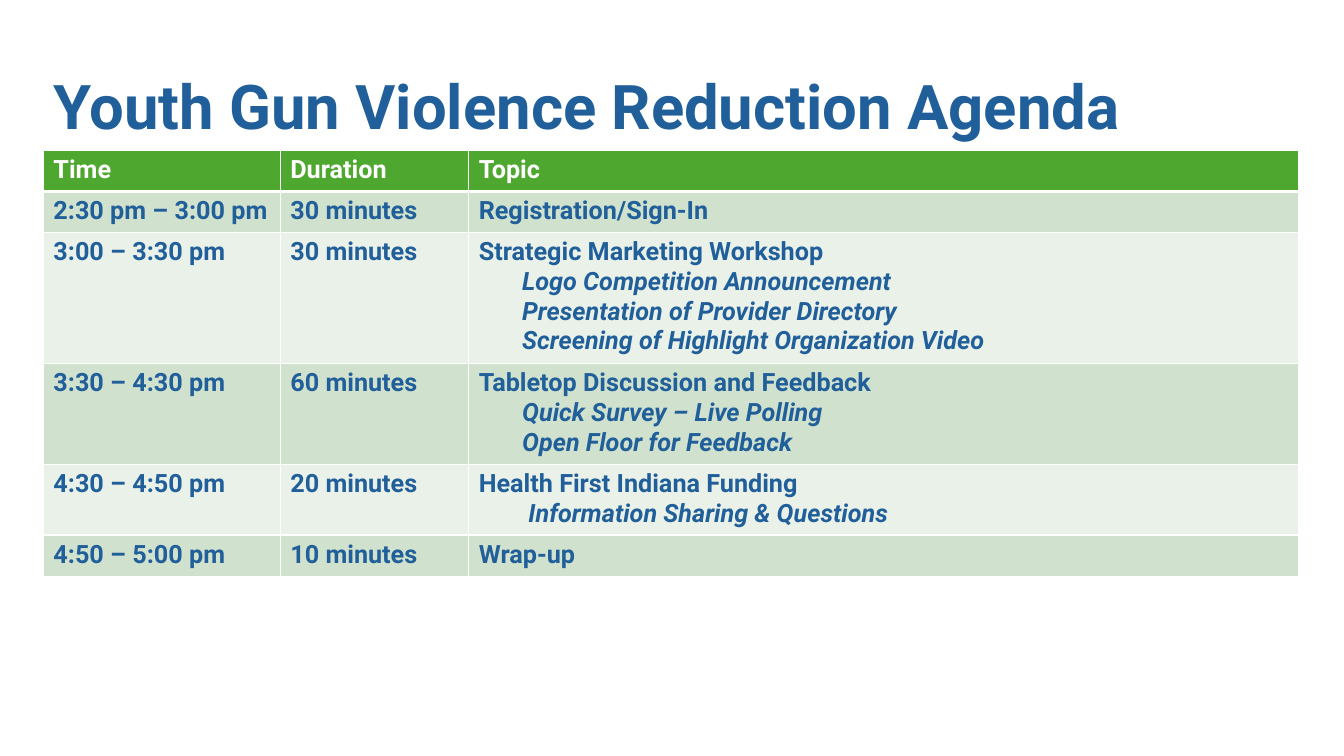
"""Builds the agenda slide: a title above a table of times, durations and topics."""
from dataclasses import dataclass

from lxml.etree import SubElement
from pptx import Presentation
from pptx.dml.color import RGBColor as Color
from pptx.enum.text import MSO_VERTICAL_ANCHOR as Anchor
from pptx.oxml.ns import qn
from pptx.util import Pt


@dataclass(frozen=True)
class Theme:
    font: str = "Roboto"
    title_size: int = 44
    table_size: int = 18
    ink: str = "215F9A"
    white: str = "FFFFFF"
    header: str = "4EA72E"
    bands: tuple = ("D0E1CD", "E9F1E8")
    thin: int = 1
    thick: int = 3


THEME = Theme()
COLUMN_WIDTHS = (169.2, 134.6, 592.6)
MIN_ROW, LINE_HEIGHT, CELL_MARGINS = 29.4, 21.1, 7.2
DETAIL_INDENT, DEEP_INDENT = 31, 35.5

HEADINGS = ("Time", "Duration", "Topic")
SESSIONS = (
    ("2:30 pm – 3:00 pm", "30 minutes", "Registration/Sign-In", (), 0),
    ("3:00 – 3:30 pm", "30 minutes", "Strategic Marketing Workshop",
     ("Logo Competition Announcement", "Presentation of Provider Directory",
      "Screening of Highlight Organization Video"), DETAIL_INDENT),
    ("3:30 – 4:30 pm", "60 minutes", "Tabletop Discussion and Feedback",
     ("Quick Survey – Live Polling", "Open Floor for Feedback"), DETAIL_INDENT),
    ("4:30 – 4:50 pm", "20 minutes", "Health First Indiana Funding",
     ("Information Sharing & Questions",), DEEP_INDENT),
    ("4:50 – 5:00 pm", "10 minutes", "Wrap-up", (), 0),
)


def add_span(para, text, size, color, italic=False):
    span = para.add_run()
    span.text = text
    font = span.font
    font.name, font.size, font.bold, font.italic = THEME.font, Pt(size), True, italic
    font.color.rgb = Color.from_string(color)


def add_title(page, text):
    box = page.shapes.add_textbox(Pt(31), Pt(26), Pt(828), Pt(104.4))
    frame = box.text_frame
    frame.word_wrap = True
    frame.vertical_anchor = Anchor.MIDDLE
    para = frame.paragraphs[0]
    para.line_spacing = 0.9
    add_span(para, text, THEME.title_size, THEME.ink)


def style_cell(cell, fill, top, bottom):
    properties = cell._tc.get_or_add_tcPr()
    sides = (("L", THEME.thin), ("R", THEME.thin), ("T", top), ("B", bottom))
    for side, width in sides:
        line = SubElement(properties, qn(f"a:ln{side}"), w=str(Pt(width)))
        paint = SubElement(line, qn("a:solidFill"))
        SubElement(paint, qn("a:srgbClr"), val=THEME.white)
    cell.fill.solid()
    cell.fill.fore_color.rgb = Color.from_string(fill)


def fill_cell(cell, text, color, details=(), indent=0):
    frame = cell.text_frame
    add_span(frame.paragraphs[0], text, THEME.table_size, color)
    for detail in details:
        para = frame.add_paragraph()
        para._p.get_or_add_pPr().set("marL", str(Pt(indent)))
        add_span(para, detail, THEME.table_size, color, italic=True)


def add_agenda(page):
    heights = [MIN_ROW] + [
        max(MIN_ROW, CELL_MARGINS + LINE_HEIGHT * (1 + len(details)))
        for *_, details, _ in SESSIONS
    ]
    table = page.shapes.add_table(
        len(heights), len(HEADINGS), Pt(31), Pt(107.3),
        Pt(sum(COLUMN_WIDTHS)), Pt(sum(heights))).table
    table.horz_banding = False
    for column, width in zip(table.columns, COLUMN_WIDTHS):
        column.width = Pt(width)
    for row, height in zip(table.rows, heights):
        row.height = Pt(height)

    for cell, heading in zip(table.rows[0].cells, HEADINGS):
        style_cell(cell, THEME.header, THEME.thin, THEME.thick)
        fill_cell(cell, heading, THEME.white)
    for index, (time, duration, topic, details, indent) in enumerate(SESSIONS):
        cells = list(table.rows[index + 1].cells)
        top = THEME.thin if index else THEME.thick
        for cell in cells:
            style_cell(cell, THEME.bands[index % 2], top, THEME.thin)
        fill_cell(cells[0], time, THEME.ink)
        fill_cell(cells[1], duration, THEME.ink)
        fill_cell(cells[2], topic, THEME.ink, details, indent)


def main():
    deck = Presentation()
    deck.slide_width, deck.slide_height = Pt(960), Pt(540)
    page = deck.slides.add_slide(deck.slide_layouts[6])
    add_title(page, "Youth Gun Violence Reduction Agenda")
    add_agenda(page)
    deck.save("out.pptx")


if __name__ == "__main__":
    main()
